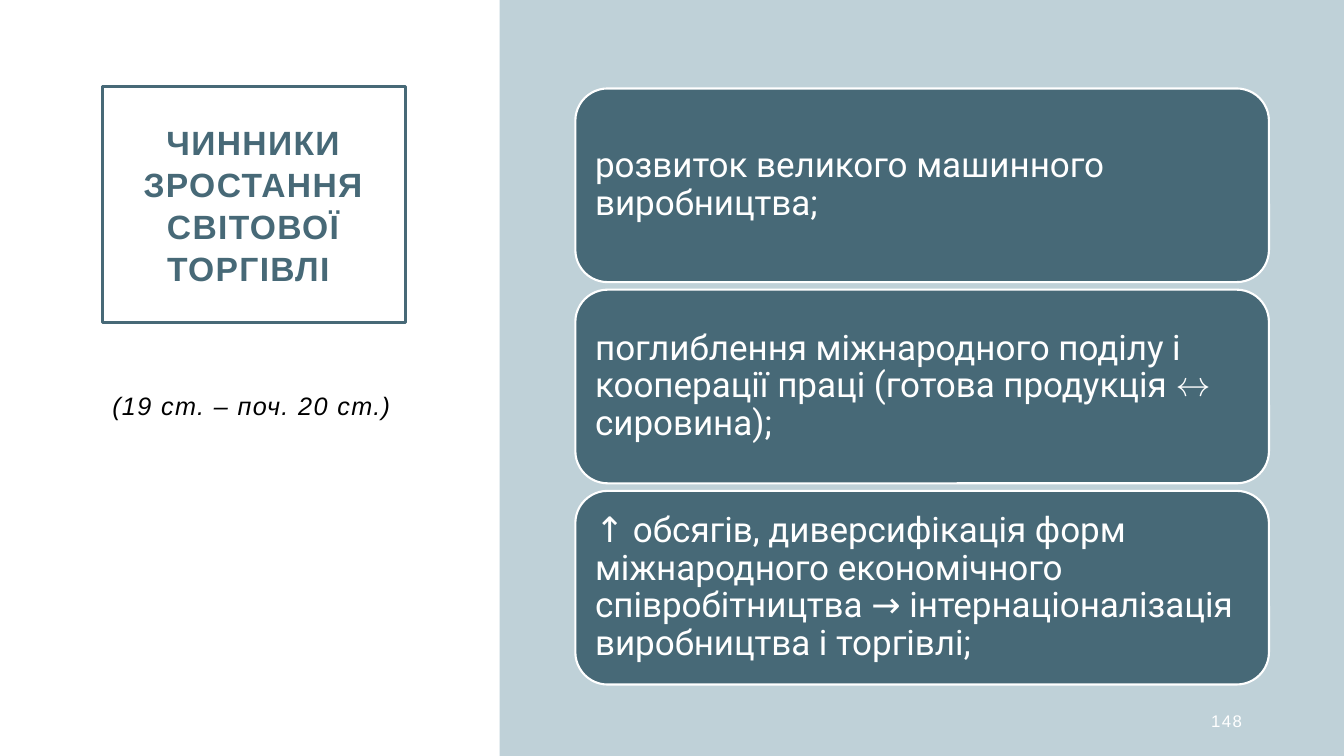
from dataclasses import dataclass

from lxml.etree import SubElement
from pptx import Presentation
from pptx.dml.color import RGBColor
from pptx.enum.shapes import MSO_SHAPE
from pptx.enum.text import MSO_ANCHOR, MSO_AUTO_SIZE, PP_ALIGN
from pptx.oxml.ns import qn
from pptx.util import Cm, Pt

# Content
TITLE = "ЧИННИКИ ЗРОСТАННЯ СВІТОВОЇ ТОРГІВЛІ "
PERIOD = "(19 ст. – поч. 20 ст.)"
NUMBER = "148"
FACTORS = [
    "розвиток великого машинного виробництва;",
    "поглиблення міжнародного поділу і кооперації праці "
    "(готова продукція ↔ сировина);",
    "↑ обсягів, диверсифікація форм міжнародного економічного "
    "співробітництва → інтернаціоналізація виробництва і торгівлі;",
]


@dataclass(frozen=True)
class Theme:
    teal: RGBColor = RGBColor(0x47, 0x69, 0x77)
    pale: RGBColor = RGBColor(0xAF, 0xC6, 0xCF)
    white: RGBColor = RGBColor(255, 255, 255)
    black: RGBColor = RGBColor(0, 0, 0)
    head: str = "Arial"
    body: str = "Roboto"
    big: int = 24
    card: int = 25
    note: int = 18
    tiny: int = 12


T = Theme()

# Layout in centimetres
WIDE, HIGH = 33.87, 19.05
PANEL = 12.59
LEFT, TOP = 14.5, 2.23
CARD_W, CARD_H, STEP = 17.48, 4.88, 5.07


def box(x, y, w, h):
    return Cm(x), Cm(y), Cm(w), Cm(h)


def write(shape, text, size, color, font=T.head, align=PP_ALIGN.LEFT,
          anchor=MSO_ANCHOR.MIDDLE, lead=1.0, track=100, bold=False, ital=False):
    frame = shape.text_frame
    frame.word_wrap = True
    frame.auto_size = MSO_AUTO_SIZE.NONE
    frame.vertical_anchor = anchor
    para = frame.paragraphs[0]
    para.alignment = align
    para.line_spacing = lead
    run = para.add_run()
    run.text = text
    face = run.font
    face.name, face.size, face.color.rgb = font, Pt(size), color
    face.bold, face.italic = bold, ital
    run._r.get_or_add_rPr().set("spc", str(track))
    return frame


def block(slide, kind, place, fill):
    shape = slide.shapes.add_shape(kind, *place)
    shape.shadow.inherit = False
    shape.fill.solid()
    shape.fill.fore_color.rgb = fill
    return shape


deck = Presentation()
deck.slide_width, deck.slide_height = Cm(WIDE), Cm(HIGH)
slide = deck.slides.add_slide(deck.slide_layouts[5])

# Translucent side panel
panel = block(slide, MSO_SHAPE.RECTANGLE, box(PANEL, 0, WIDE - PANEL, HIGH), T.pale)
panel.line.fill.background()
tint = panel.fill._xPr.find(qn("a:solidFill"))[0]
SubElement(tint, qn("a:alpha")).set("val", "80000")

# Framed title
title = slide.shapes.title
title.left, title.top, title.width, title.height = box(2.58, 2.17, 7.63, 5.95)
title.line.color.rgb = T.teal
title.line.width = Pt(2.25)
write(title, TITLE, T.big, T.teal, align=PP_ALIGN.CENTER, lead=1.04, bold=True)

# Period and slide number
period = slide.shapes.add_textbox(*box(2.58, 9.53, 8.1, 8.13))
write(period, PERIOD, T.note, T.black, anchor=MSO_ANCHOR.TOP, lead=1.25, ital=True)
number = slide.shapes.add_textbox(*box(23.93, 17.66, 7.62, 1.01))
write(number, NUMBER, T.tiny, T.white, align=PP_ALIGN.RIGHT)

# Factor cards
for row, factor in enumerate(FACTORS):
    place = box(LEFT, TOP + row * STEP, CARD_W, CARD_H)
    card = block(slide, MSO_SHAPE.ROUNDED_RECTANGLE, place, T.teal)
    card.line.color.rgb = T.white
    card.line.width = Pt(1.5)
    frame = write(card, factor, T.card, T.white, T.body, lead=0.9, track=0)
    frame.margin_left = frame.margin_right = Cm(0.26)
    frame.margin_top = frame.margin_bottom = Cm(0.26)

deck.save("out.pptx")
